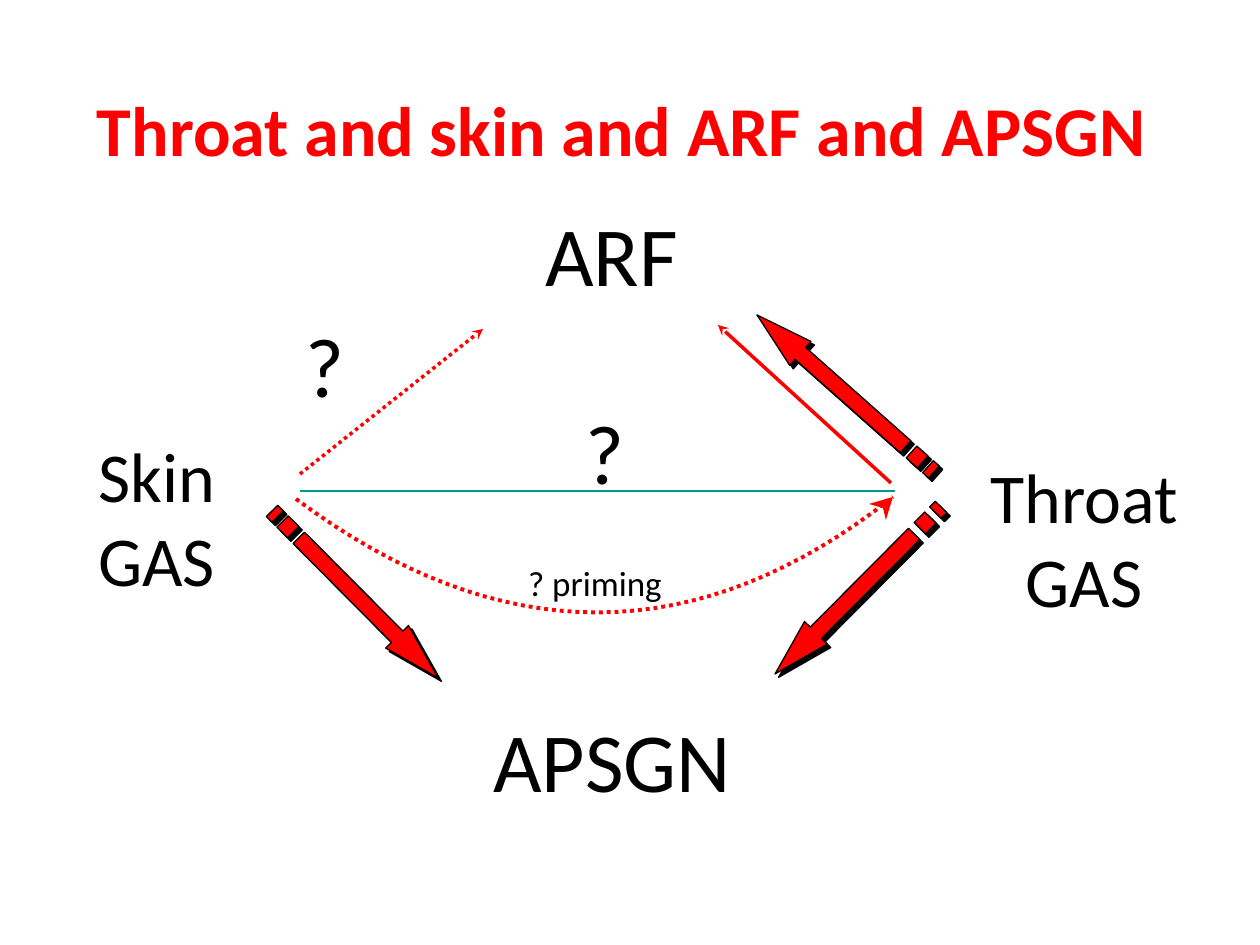
from math import cos, hypot, sin, atan2

from lxml.etree import SubElement
from pptx import Presentation
from pptx.dml.color import RGBColor
from pptx.enum.dml import MSO_LINE
from pptx.enum.shapes import MSO_CONNECTOR
from pptx.enum.text import MSO_ANCHOR, MSO_AUTO_SIZE, PP_ALIGN
from pptx.oxml.ns import qn
from pptx.util import Emu, Pt

SCALE = 914400 / 126  # EMU per px
COLORS = {"red": "FF0000", "black": "000000", "teal": "009999"}


def px(n):
    return Emu(round(n * SCALE))


def rgb(name):
    return RGBColor.from_string(COLORS[name])


def write(tf, text, size=48, color="black", bold=False, align=PP_ALIGN.CENTER,
          margin=0, anchor=MSO_ANCHOR.TOP):
    tf.word_wrap = True
    tf.auto_size = MSO_AUTO_SIZE.NONE
    tf.vertical_anchor = anchor
    tf.margin_left = tf.margin_right = px(margin)
    tf.margin_top = tf.margin_bottom = 0
    p = tf.paragraphs[0]
    p.alignment = align
    r = p.add_run()
    r.text = text
    r.font.name = "Calibri"
    r.font.size = Pt(size)
    r.font.bold = bold
    r.font.color.rgb = rgb(color)


class Diagram:
    def __init__(self, s):
        self.s = s

    def title(self, text, x, y, w, h, **fmt):
        sp = self.s.shapes.title
        sp.left, sp.top, sp.width, sp.height = map(px, (x, y, w, h))
        write(sp.text_frame, text, **fmt)

    def label(self, text, x, y, w, h, **fmt):
        sp = self.s.shapes.add_textbox(*map(px, (x, y, w, h)))
        write(sp.text_frame, text, **fmt)

    def stroke(self, line, color, width, dash=None):
        line.color.rgb = rgb(color)
        line.width = Pt(width)
        if dash:
            line.dash_style = dash

    def line(self, start, end, color="red", width=2, dash=None, arrow=True):
        sp = self.s.shapes.add_connector(
            MSO_CONNECTOR.STRAIGHT, *map(px, (*start, *end)))
        self.stroke(sp.line, color, width, dash)
        if arrow:
            SubElement(sp.line._get_or_add_ln(), qn("a:tailEnd"), type="stealth")
        SubElement(sp._element.spPr, qn("a:effectLst"))

    def outline(self, contours, fill=None, line=None, close=True):
        """Freeform from lists of px points; line is (color, width, dash)."""
        builder = None
        for first, *rest in contours:
            x, y = map(px, first)
            if builder is None:
                builder = self.s.shapes.build_freeform(x, y)
            else:
                builder.move_to(x, y)
            builder.add_line_segments(
                [(px(a), px(b)) for a, b in rest], close=close)
        sp = builder.convert_to_shape()
        sp.shadow.inherit = False
        if fill:
            sp.fill.solid()
            sp.fill.fore_color.rgb = rgb(fill)
        else:
            sp.fill.background()
        if line:
            self.stroke(sp.line, *line)
        else:
            sp.line.fill.background()
        return sp

    def curve(self, start, control, end, steps=32):
        points = []
        for i in range(steps + 1):
            t = i / steps
            points.append([a * (1 - t) ** 2 + 2 * b * t * (1 - t) + c * t ** 2
                           for a, b, c in zip(start, control, end)])
        self.outline([points], line=("red", 2.25, MSO_LINE.ROUND_DOT), close=False)

    def striped_arrow(self, tail, tip):
        """Block arrow with two stripes behind its shaft and a hard shadow."""
        dx, dy = tip[0] - tail[0], tip[1] - tail[1]
        length, angle = hypot(dx, dy), atan2(dy, dx)
        shaft, barb, base = 8, 16, length - 58

        def place(points):
            return [(tail[0] + u * cos(angle) - v * sin(angle),
                     tail[1] + u * sin(angle) + v * cos(angle)) for u, v in points]

        stripes = [[(a, -shaft), (b, -shaft), (b, shaft), (a, shaft)]
                   for a, b in ((0, 8), (15, 30))]
        body = [(38, -shaft), (base, -shaft), (base, -barb), (length, 0),
                (base, barb), (base, shaft), (38, shaft)]
        sp = self.outline([place(c) for c in (body, *stripes)],
                          fill="red", line=("black", 0.75))
        effects = sp._element.spPr.find(qn("a:effectLst"))
        shadow = SubElement(effects, qn("a:outerShdw"), dist=str(Pt(2.8)),
                            dir="2700000", algn="ctr", rotWithShape="0")
        SubElement(shadow, qn("a:srgbClr"), val=COLORS["black"])


def main():
    prs = Presentation()
    prs.slide_width, prs.slide_height = px(1260), px(945)
    d = Diagram(prs.slides.add_slide(prs.slide_layouts[5]))

    d.title("Throat and skin and ARF and APSGN", 84, 86, 1101, 84, size=40,
            color="red", bold=True, align=PP_ALIGN.LEFT, margin=13,
            anchor=MSO_ANCHOR.MIDDLE)

    # Skin to throat: straight link and dotted priming curve
    d.line((300, 491), (895, 491), color="teal", width=0.75, arrow=False)
    d.curve((296, 499), (602, 727), (893, 497))
    d.outline([[(869, 504), (893, 497), (886, 520), (883, 508)]], fill="red")

    # Labels
    d.label("ARF", 496, 203, 231, 101)
    d.label("APSGN", 426, 709, 372, 101)
    d.label("?", 567, 401, 76, 101)
    d.label("?", 306, 314, 76, 101, align=PP_ALIGN.LEFT)
    d.label("? priming", 499, 561, 192, 42, size=20)
    d.label("Throat GAS", 951, 454, 266, 168, size=40)
    d.label("Skin GAS", 54, 433, 205, 252, size=40)

    # Strong links: skin to APSGN, throat to APSGN, throat to ARF
    for tail, tip in (((272, 511), (438, 678)),
                      ((941, 507), (775, 674)),
                      ((934, 472), (757, 315))):
        d.striped_arrow(tail, tip)

    # Thin links to ARF
    d.line((300, 474), (483, 329), dash=MSO_LINE.ROUND_DOT)
    d.line((891, 483), (718, 325))

    prs.save("out.pptx")


if __name__ == "__main__":
    main()
